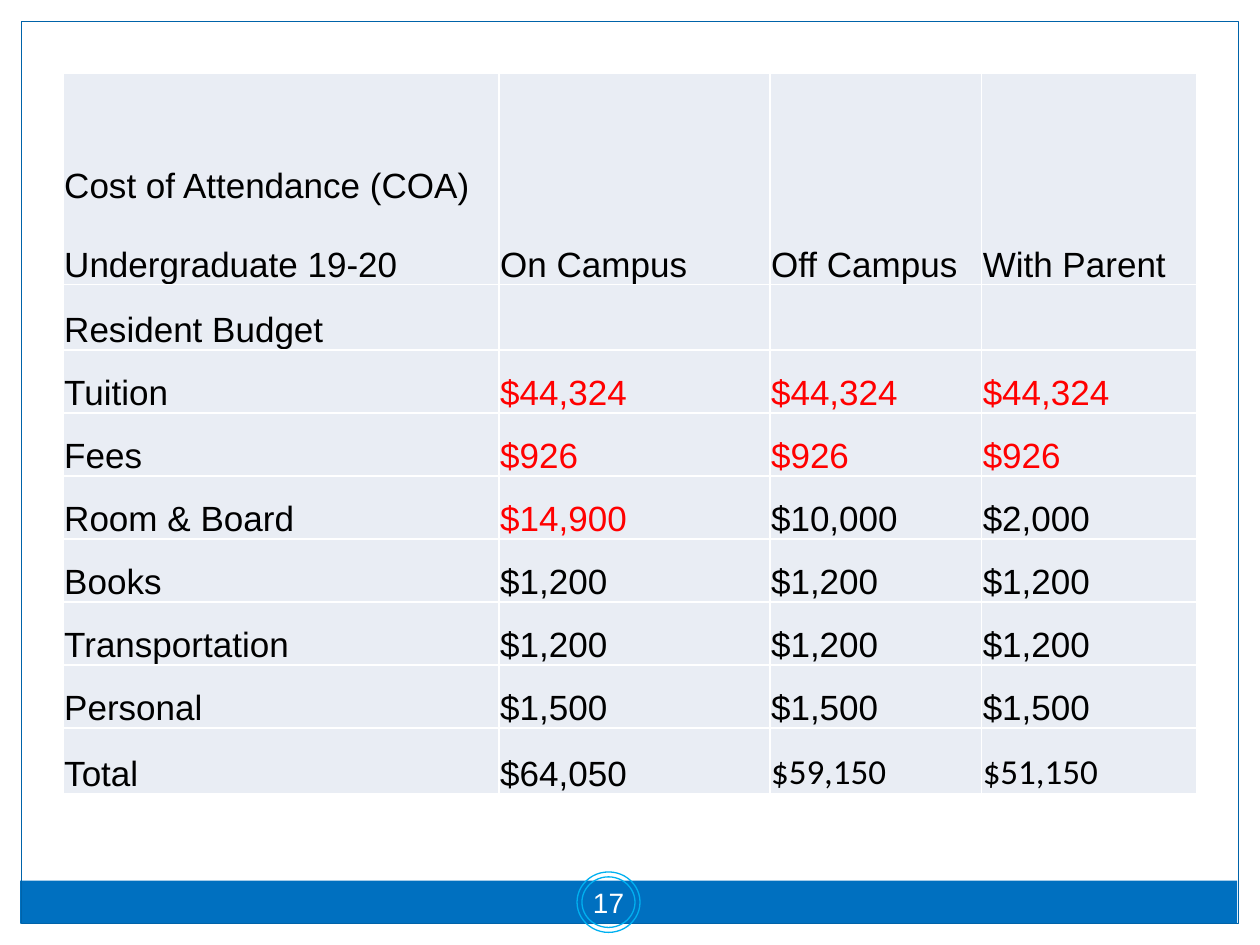
from dataclasses import dataclass

from lxml.etree import SubElement
from pptx import Presentation
from pptx.dml.color import RGBColor
from pptx.enum.shapes import MSO_SHAPE as Preset
from pptx.enum.text import MSO_ANCHOR as Anchor, PP_ALIGN as Align
from pptx.oxml.ns import qn
from pptx.util import Inches, Pt

COLORS = {
    "white": "FFFFFF", "black": "000000", "red": "FF0000", "cell": "E9EDF4",
    "bar": "0070C0", "frame": "0063A9", "ring": "00B0F0",
}
COLUMN_WIDTHS = [3.46, 2.15, 1.68, 1.71]
ROW_HEIGHTS = [1.68, 0.52] + [0.5] * 6 + [0.52]
BUDGET = [
    ["Cost of Attendance (COA)\nUndergraduate 19-20", "On Campus", "Off Campus", "With Parent"],
    ["Resident Budget", "", "", ""],
    ["Tuition", "$44,324", "$44,324", "$44,324"],
    ["Fees", "$926", "$926", "$926"],
    ["Room & Board", "$14,900", "$10,000", "$2,000"],
    ["Books", "$1,200", "$1,200", "$1,200"],
    ["Transportation", "$1,200", "$1,200", "$1,200"],
    ["Personal", "$1,500", "$1,500", "$1,500"],
    ["Total", "$64,050", "$59,150", "$51,150"],
]
UNIVERSITY_CHARGES = {"$44,324", "$926", "$14,900"}
CALIBRI_TOTALS = {"$59,150", "$51,150"}


@dataclass
class Panel:
    left: float
    top: float
    width: float
    height: float
    fill: str | None = None
    line: str | None = None
    preset: Preset = Preset.RECTANGLE


PANELS = [
    Panel(0, 0, 10, 0.17, fill="white"),
    Panel(9.83, 0, 0.17, 7.5, fill="white"),
    Panel(0, 0, 0.17, 7.5, fill="white"),
    Panel(0.16, 6.99, 9.66, 0.34, fill="bar"),
    Panel(0.17, 0.17, 9.66, 7.16, line="frame"),
]
PAGE_RING = Panel(4.58, 6.92, 0.5, 0.48, line="ring", preset=Preset.DONUT)


def rgb(name: str) -> RGBColor:
    return RGBColor.from_string(COLORS[name])


def draw_panel(page, panel: Panel):
    shape = page.shapes.add_shape(
        panel.preset, Inches(panel.left), Inches(panel.top),
        Inches(panel.width), Inches(panel.height))
    shape.shadow.inherit = False
    if panel.fill:
        shape.fill.solid()
        shape.fill.fore_color.rgb = rgb(panel.fill)
    else:
        shape.fill.background()
    if panel.line:
        shape.line.color.rgb = rgb(panel.line)
        shape.line.width = Pt(0.75)
    else:
        shape.line.fill.background()
    return shape


def add_span(para, text: str, size: float, color: str, font: str = "Arial") -> None:
    span = para.add_run()
    span.text = text
    span.font.size = Pt(size)
    span.font.name = font
    span.font.color.rgb = rgb(color)


def add_borders(cell) -> None:
    """Draw white one-point lines; call before the fill, which must follow them."""
    properties = cell._tc.get_or_add_tcPr()
    for side in ("a:lnL", "a:lnR", "a:lnT", "a:lnB"):
        line = SubElement(properties, qn(side), w=str(Pt(1)))
        fill = SubElement(line, qn("a:solidFill"))
        SubElement(fill, qn("a:srgbClr"), val=COLORS["white"])


def fill_cell(cell, text: str) -> None:
    add_borders(cell)
    cell.fill.solid()
    cell.fill.fore_color.rgb = rgb("cell")
    if not text:
        return
    cell.vertical_anchor = Anchor.BOTTOM
    cell.margin_left = cell.margin_right = cell.margin_top = Inches(0.01)
    cell.margin_bottom = 0
    color = "red" if text in UNIVERSITY_CHARGES else "black"
    font = "Calibri" if text in CALIBRI_TOTALS else "Arial"
    frame = cell.text_frame
    for index, line in enumerate(text.split("\n")):
        para = frame.add_paragraph() if index else frame.paragraphs[0]
        if index:
            para.space_before = Pt(23)
        add_span(para, line, 20, color, font)


def draw_budget(page) -> None:
    table = page.shapes.add_table(
        len(BUDGET), len(COLUMN_WIDTHS), Inches(0.5), Inches(0.58),
        Inches(sum(COLUMN_WIDTHS)), Inches(sum(ROW_HEIGHTS))).table
    table.first_row = table.horz_banding = False
    for column, width in zip(table.columns, COLUMN_WIDTHS):
        column.width = Inches(width)
    for row, height, texts in zip(table.rows, ROW_HEIGHTS, BUDGET):
        row.height = Inches(height)
        for cell, text in zip(row.cells, texts):
            fill_cell(cell, text)


def draw_page_number(page, number: str) -> None:
    ring = draw_panel(page, PAGE_RING)
    ring.adjustments[0] = 0.082
    frame = ring.text_frame
    frame.word_wrap = False
    frame.vertical_anchor = Anchor.MIDDLE
    frame.margin_left = frame.margin_right = Inches(0.05)
    frame.margin_top = frame.margin_bottom = Inches(0.05)
    para = frame.paragraphs[0]
    para.alignment = Align.CENTER
    add_span(para, number, 16, "white")


def main() -> None:
    deck = Presentation()
    deck.slide_width, deck.slide_height = Inches(10), Inches(7.5)
    page = deck.slides.add_slide(deck.slide_layouts[6])
    page.background.fill.solid()
    page.background.fill.fore_color.rgb = rgb("white")
    for panel in PANELS:
        draw_panel(page, panel)
    draw_budget(page)
    draw_page_number(page, "17")
    deck.save("out.pptx")


if __name__ == "__main__":
    main()
